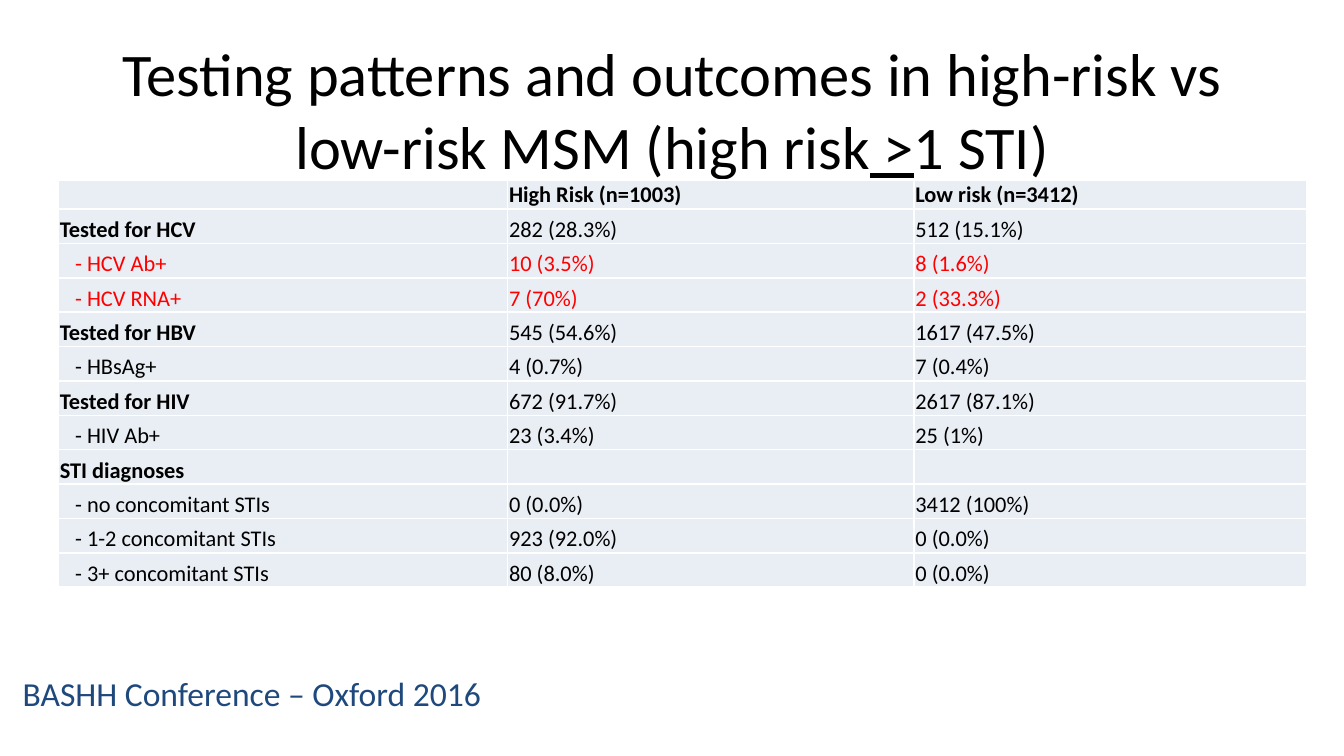
import pptx
import pptx.dml.color
import pptx.enum.text
import pptx.util
from lxml import etree
from pptx.util import Cm

FONT = "Calibri"
COLORS = {
    "text": "000000",
    "alert": "FF0000",
    "footer": "1F497D",
    "cell": "E9EDF4",
}
COLUMN_WIDTHS = [8.49, 7.68, 7.42]
HEADER_HEIGHT = 0.55
ROW_HEIGHT = 0.65
HEADER = ["", "High Risk (n=1003)", "Low risk (n=3412)"]
GROUPS = [
    ("Tested for HCV", "282 (28.3%)", "512 (15.1%)", "alert", [
        ("- HCV Ab+", "10 (3.5%)", "8 (1.6%)"),
        ("- HCV RNA+", "7 (70%)", "2 (33.3%)"),
    ]),
    ("Tested for HBV", "545 (54.6%)", "1617 (47.5%)", "text", [
        ("- HBsAg+", "4 (0.7%)", "7 (0.4%)"),
    ]),
    ("Tested for HIV", "672 (91.7%)", "2617 (87.1%)", "text", [
        ("- HIV Ab+", "23 (3.4%)", "25 (1%)"),
    ]),
    ("STI diagnoses", "", "", "text", [
        ("- no concomitant STIs", "0 (0.0%)", "3412 (100%)"),
        ("- 1-2 concomitant STIs", "923 (92.0%)", "0 (0.0%)"),
        ("- 3+ concomitant STIs", "80 (8.0%)", "0 (0.0%)"),
    ]),
]


def rgb(name):
    return pptx.dml.color.RGBColor.from_string(COLORS[name])


def format_run(r, size, color, bold=False):
    r.font.name = FONT
    r.font.size = pptx.util.Pt(size)
    r.font.bold = bold
    r.font.color.rgb = rgb(color)


def add_title(s):
    sp = s.shapes.title
    sp.left, sp.top, sp.width, sp.height = Cm(1.27), Cm(0.66), Cm(22.86), Cm(2.8)
    tf = sp.text_frame
    tf.word_wrap = True
    tf.auto_size = pptx.enum.text.MSO_AUTO_SIZE.NONE
    tf.vertical_anchor = pptx.enum.text.MSO_ANCHOR.MIDDLE
    p = tf.paragraphs[0]
    p.alignment = pptx.enum.text.PP_ALIGN.CENTER
    parts = [
        ("Testing patterns and outcomes in high-risk vs low-risk MSM (high risk", False),
        (" >", True),
        ("1 STI)", False),
    ]
    for text, underline in parts:
        r = p.add_run()
        r.text = text
        format_run(r, 32.4, "text")
        r.font.underline = underline


def add_footer(s):
    sp = s.shapes.add_textbox(Cm(0.18), Cm(12.6), Cm(12.14), Cm(1.75))
    tf = sp.text_frame
    tf.word_wrap = True
    tf.text = "BASHH Conference – Oxford 2016"
    format_run(tf.paragraphs[0].runs[0], 18, "footer")


def fill_cell(cell, text, color="text", bold=False, indent=0):
    cell.fill.solid()
    cell.fill.fore_color.rgb = rgb("cell")
    cell.vertical_anchor = pptx.enum.text.MSO_ANCHOR.BOTTOM
    cell.margin_left = cell.margin_right = cell.margin_top = Cm(0.03)
    cell.margin_bottom = 0
    p = cell.text_frame.paragraphs[0]
    p.text = text
    if indent:
        p._p.get_or_add_pPr().set("marL", str(Cm(indent)))
    for r in p.runs:
        format_run(r, 12, color, bold)
    if not text:
        end = etree.SubElement(p._p, pptx.oxml.ns.qn("a:endParaRPr"))
        end.set("sz", "1200")


def add_results_table(s):
    rows = [(HEADER, "text", True, 0)]
    for label, high, low, color, details in GROUPS:
        rows.append(([label, high, low], "text", False, 0))
        rows += [(detail, color, False, 0.29) for detail in details]

    height = HEADER_HEIGHT + ROW_HEIGHT * (len(rows) - 1)
    table = s.shapes.add_table(
        len(rows), len(COLUMN_WIDTHS), Cm(1.1), Cm(3.4),
        Cm(sum(COLUMN_WIDTHS)), Cm(height)).table
    table.first_row = False
    table.horz_banding = False
    for column, width in zip(table.columns, COLUMN_WIDTHS):
        column.width = Cm(width)
    for i, (texts, color, header, indent) in enumerate(rows):
        table.rows[i].height = Cm(HEADER_HEIGHT if header else ROW_HEIGHT)
        for j, text in enumerate(texts):
            is_label = j == 0
            bold = header or (is_label and not indent)
            fill_cell(table.cell(i, j), text, color, bold, indent if is_label else 0)


def main():
    prs = pptx.Presentation()
    prs.slide_width, prs.slide_height = Cm(25.4), Cm(14.29)
    s = prs.slides.add_slide(prs.slide_layouts[5])
    add_footer(s)
    add_title(s)
    add_results_table(s)
    prs.save("out.pptx")


if __name__ == "__main__":
    main()
